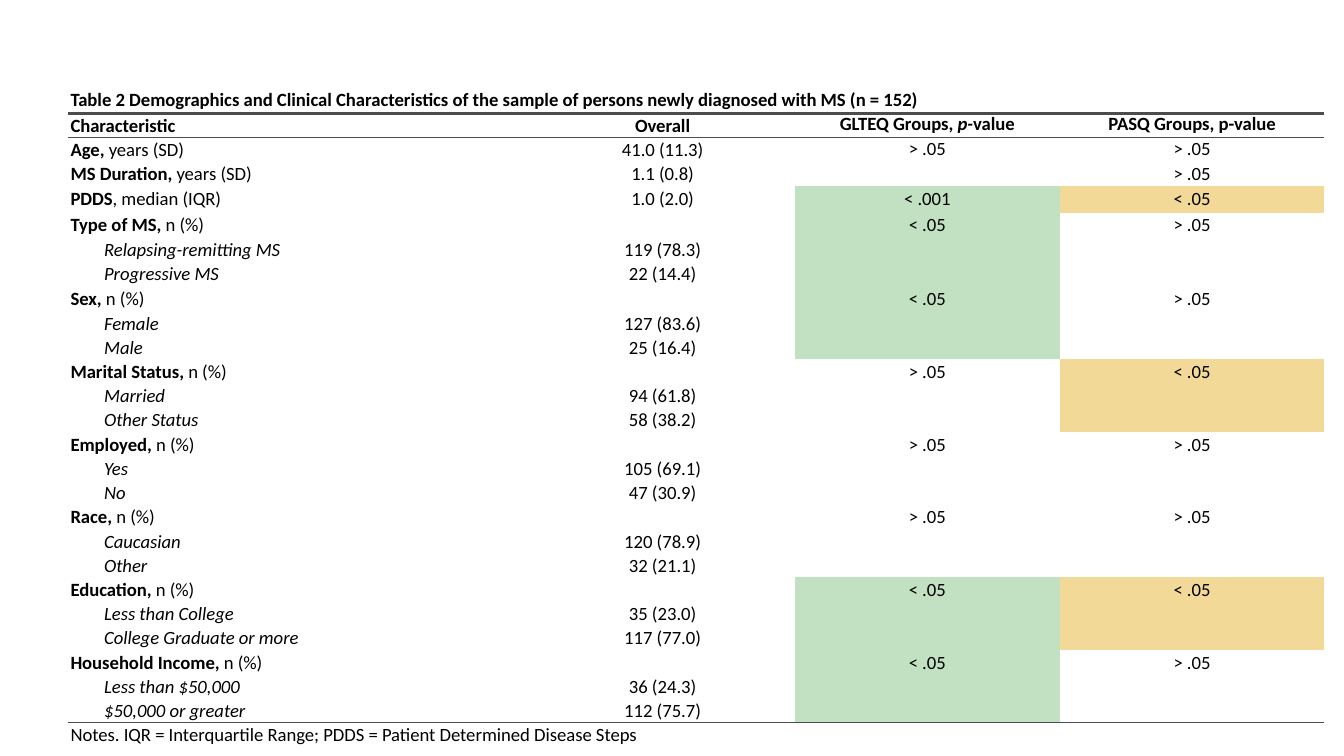
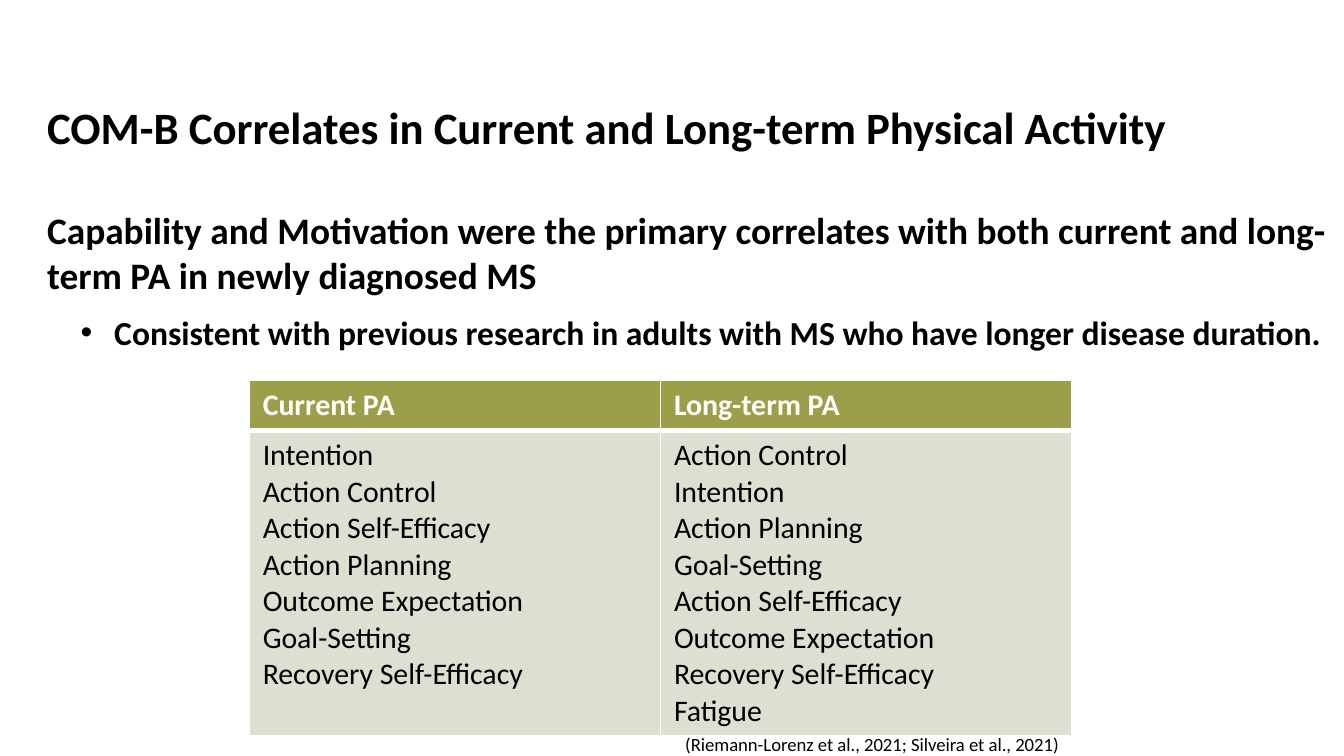
from dataclasses import dataclass
from typing import NamedTuple

from lxml import etree
from pptx import Presentation, util as u
from pptx.dml.color import RGBColor
from pptx.enum import text as txt
from pptx.oxml import ns

BLACK = RGBColor(0x00, 0x00, 0x00)
WHITE = RGBColor(0xFF, 0xFF, 0xFF)
RULE = RGBColor(0x4C, 0x4C, 0x4C)
GREEN = RGBColor(0xC2, 0xE0, 0xC2)
AMBER = RGBColor(0xF2, 0xD9, 0x98)
OLIVE = RGBColor(0x9C, 0x9F, 0x49)
PALE_OLIVE = RGBColor(0xDE, 0xDF, 0xD0)

FONT = "Calibri"
SLIDE_W = u.Inches(10)
SLIDE_H = SLIDE_W * 9 // 16
NO_STYLE = "{2D5ABB26-0587-4C30-8999-92F81FD0307C}"
LEFT, CENTER = txt.PP_ALIGN.LEFT, txt.PP_ALIGN.CENTER
LINE = 1.07
TEXT_LINE = u.Pt(13)


class Run(NamedTuple):
    text: str
    bold: bool = False
    italic: bool = False


class Area(NamedTuple):
    """A box in percent of the slide's width and height."""
    left: float
    top: float
    width: float
    height: float

    def emu(self) -> tuple:
        return x(self.left), y(self.top), x(self.width), y(self.height)


@dataclass
class Characteristic:
    name: str
    unit: str
    overall: list[str]
    gltq: str
    pasq: str
    levels: tuple[str, ...] = ()
    height: float = 9.43


def x(percent: float) -> int:
    return round(SLIDE_W * percent / 100)


def y(percent: float) -> int:
    return round(SLIDE_H * percent / 100)


CHARACTERISTICS = [
    Characteristic("Age, ", "years (SD)", ["41.0 (11.3)"], "> .05", "> .05", height=3.2),
    Characteristic("MS Duration, ", "years (SD)", ["1.1 (0.8)"], "", "> .05", height=3.02),
    Characteristic("PDDS", ", median (IQR)", ["1.0 (2.0)"], "< .001", "< .05", height=3.56),
    Characteristic("Type of MS, ", "n (%)", ["119 (78.3)", "22 (14.4)"], "< .05", "> .05",
                   ("Relapsing-remitting MS", "Progressive MS"), 9.79),
    Characteristic("Sex, ", "n (%)", ["127 (83.6)", "25 (16.4)"], "< .05", "> .05",
                   ("Female", "Male")),
    Characteristic("Marital Status, ", "n (%)", ["94 (61.8)", "58 (38.2)"], "> .05", "< .05",
                   ("Married", "Other Status")),
    Characteristic("Employed, ", "n (%)", ["105 (69.1)", "47 (30.9)"], "> .05", "> .05",
                   ("Yes", "No")),
    Characteristic("Race, ", "n (%)", ["120 (78.9)", "32 (21.1)"], "> .05", "> .05",
                   ("Caucasian", "Other")),
    Characteristic("Education, ", "n (%)", ["35 (23.0)", "117 (77.0)"], "< .05", "< .05",
                   ("Less than College", "College Graduate or more")),
    Characteristic("Household Income, ", "n (%)", ["36 (24.3)", "112 (75.7)"], "< .05", "> .05",
                   ("Less than $50,000", "$50,000 or greater")),
]

CORRELATES = {
    "Current PA": ["Intention", "Action Control", "Action Self-Efficacy", "Action Planning",
                   "Outcome Expectation", "Goal-Setting", "Recovery Self-Efficacy"],
    "Long-term PA": ["Action Control", "Intention", "Action Planning", "Goal-Setting",
                     "Action Self-Efficacy", "Outcome Expectation", "Recovery Self-Efficacy",
                     "Fatigue"],
}


def set_attrs(obj, **values) -> None:
    for name, value in values.items():
        setattr(obj, name, value)


def add_runs(p, runs: list[Run], size: float, color: RGBColor = BLACK, **layout) -> None:
    set_attrs(p, **layout)
    for run in runs:
        r = p.add_run()
        r.text = run.text
        set_attrs(r.font, name=FONT, size=u.Pt(size), bold=run.bold, italic=run.italic)
        r.font.color.rgb = color


def indent(p, left: float, first: float = 0, bullet: str = "") -> None:
    """Set left and first-line indents as percent of slide width, and the bullet."""
    pPr = p._p.get_or_add_pPr()
    pPr.set("marL", str(x(left)))
    pPr.set("indent", str(x(first)))
    mark = etree.SubElement(pPr, ns.qn("a:buChar" if bullet else "a:buNone"))
    if bullet:
        mark.set("char", bullet)


def paragraphs(tf, count: int) -> list:
    return [tf.paragraphs[0]] + [tf.add_paragraph() for _ in range(count - 1)]


def style_cell(cell, fill: RGBColor | None = None, line: RGBColor = RULE, **widths) -> None:
    """Fill a cell and draw its borders, given in points by side L, R, T, B."""
    tcPr = cell._tc.get_or_add_tcPr()
    for side in "LRTB":
        ln = etree.SubElement(tcPr, ns.qn(f"a:ln{side}"))
        if side in widths:
            ln.set("w", str(u.Pt(widths[side])))
            solid = etree.SubElement(ln, ns.qn("a:solidFill"))
            etree.SubElement(solid, ns.qn("a:srgbClr"), val=str(line))
        else:
            etree.SubElement(ln, ns.qn("a:noFill"))
    if fill is None:
        cell.fill.background()
    else:
        cell.fill.solid()
        cell.fill.fore_color.rgb = fill


def add_plain_table(s, area: Area, col_widths: list[float], row_heights: list[float]):
    table = s.shapes.add_table(len(row_heights), len(col_widths), *area.emu()).table
    set_attrs(table, first_row=False, horz_banding=False)
    table._tbl.tblPr.find(ns.qn("a:tableStyleId")).text = NO_STYLE
    for column, width in zip(table.columns, col_widths):
        column.width = x(width)
    for row, height in zip(table.rows, row_heights):
        row.height = y(height)
    return table


def add_characteristics_slide(prs) -> None:
    s = prs.slides.add_slide(prs.slide_layouts[6])
    heights = [3.38, 3.2] + [c.height for c in CHARACTERISTICS] + [3.02]
    table = add_plain_table(s, Area(5.05, 11.6, 93.5, sum(heights)),
                            [34.4, 19.7, 19.7, 19.7], heights)
    for cell in table.iter_cells():
        set_attrs(cell, margin_left=x(0.2), margin_right=x(0.2), margin_top=0, margin_bottom=0)
        cell.text_frame.paragraphs[0]._p.get_or_add_endParaRPr().set("sz", "1000")

    last = len(heights) - 1
    full_width = {
        0: Run("Table 2 Demographics and Clinical Characteristics of the sample of persons "
               "newly diagnosed with MS (n = 152)", bold=True),
        last: Run("Notes. IQR = Interquartile Range; PDDS = Patient Determined Disease Steps"),
    }
    for row, run in full_width.items():
        table.cell(row, 0).merge(table.cell(row, 3))
        add_runs(table.cell(row, 0).text_frame.paragraphs[0], [run], 10, line_spacing=LINE)
    for col in range(4):
        style_cell(table.cell(0, col), B=2)
        style_cell(table.cell(1, col), T=1, B=1)
        style_cell(table.cell(last, col), T=1)

    headings = [
        [Run("Characteristic", True)],
        [Run("Overall", True)],
        [Run("GLTEQ Groups, ", True), Run("p-", True, True), Run("value", True)],
        [Run("PASQ Groups, p-value", True)],
    ]
    for col, runs in enumerate(headings):
        add_runs(table.cell(1, col).text_frame.paragraphs[0], runs, 10,
                 alignment=CENTER if col else LEFT, line_spacing=LINE if col < 2 else 1.0)

    for row, item in enumerate(CHARACTERISTICS, start=2):
        label, overall, *p_cells = [table.cell(row, col) for col in range(4)]
        borders = {"T": 1} if row == 2 else {"B": 1} if row == last - 1 else {}

        first, *rest = paragraphs(label.text_frame, 1 + len(item.levels))
        add_runs(first, [Run(item.name, True), Run(item.unit)], 10, line_spacing=LINE)
        for p, level in zip(rest, item.levels):
            indent(p, 2.5)
            add_runs(p, [Run(level, italic=True)], 10, line_spacing=LINE)

        if item.levels:
            overall.margin_top = TEXT_LINE
        for p, value in zip(paragraphs(overall.text_frame, len(item.overall)), item.overall):
            add_runs(p, [Run(value)], 10, alignment=CENTER, line_spacing=LINE)
        for cell in (label, overall):
            style_cell(cell, **borders)

        for cell, value, highlight in zip(p_cells, (item.gltq, item.pasq), (GREEN, AMBER)):
            if value:
                add_runs(cell.text_frame.paragraphs[0], [Run(value)], 10, alignment=CENTER,
                         line_spacing=1.0 if row == 2 else LINE)
            style_cell(cell, highlight if value.startswith("<") else None, **borders)


def place(sp, area: Area, **frame):
    set_attrs(sp, **dict(zip(("left", "top", "width", "height"), area.emu())))
    set_attrs(sp.text_frame, word_wrap=True, auto_size=txt.MSO_AUTO_SIZE.NONE,
              vertical_anchor=txt.MSO_ANCHOR.TOP, **frame)
    return sp.text_frame


def add_correlates_slide(prs) -> None:
    s = prs.slides.add_slide(prs.slide_layouts[1])
    tf = place(s.shapes.title, Area(0, 12.27, 95, 14.04))
    indent(tf.paragraphs[0], 0, 2.5)
    add_runs(tf.paragraphs[0],
             [Run("COM-B Correlates in Current and Long-term Physical Activity", True)], 24,
             alignment=LEFT)

    tf = place(s.placeholders[1], Area(0, 20.27, 100, 64.18), margin_top=y(7.1))
    finding, support = paragraphs(tf, 2)
    indent(finding, 2.5)
    add_runs(finding, [Run("Capability and Motivation were the primary correlates with both "
                           "current and long-term PA in newly diagnosed MS", True)], 20,
             space_before=u.Pt(0))
    support.level = 1
    indent(support, 7.5, -2.5, "•")
    add_runs(support, [Run("Consistent with previous research in adults with MS who have longer "
                           "disease duration.", True)], 18, space_before=u.Pt(8))

    table = add_plain_table(s, Area(18.55, 50.32, 61.2, 42.88), [30.6, 30.6], [5.16, 37.72])
    for col, (heading, factors) in enumerate(CORRELATES.items()):
        head, body = table.cell(0, col), table.cell(1, col)
        add_runs(head.text_frame.paragraphs[0], [Run(heading, True)], 16, WHITE)
        for p, factor in zip(paragraphs(body.text_frame, len(factors)), factors):
            add_runs(p, [Run(factor)], 16)
        style_cell(head, OLIVE, WHITE, L=1, R=1, T=1, B=3)
        style_cell(body, PALE_OLIVE, WHITE, L=1, R=1, T=3, B=1)

    citation = s.shapes.add_textbox(*Area(50, 96.05, 44.3, 4.8).emu())
    citation.text_frame.word_wrap = True
    add_runs(citation.text_frame.paragraphs[0],
             [Run("(Riemann-Lorenz et al., 2021; Silveira et al., 2021)")], 10)


def main() -> None:
    prs = Presentation()
    set_attrs(prs, slide_width=SLIDE_W, slide_height=SLIDE_H)
    add_characteristics_slide(prs)
    add_correlates_slide(prs)
    prs.save("out.pptx")


if __name__ == "__main__":
    main()
